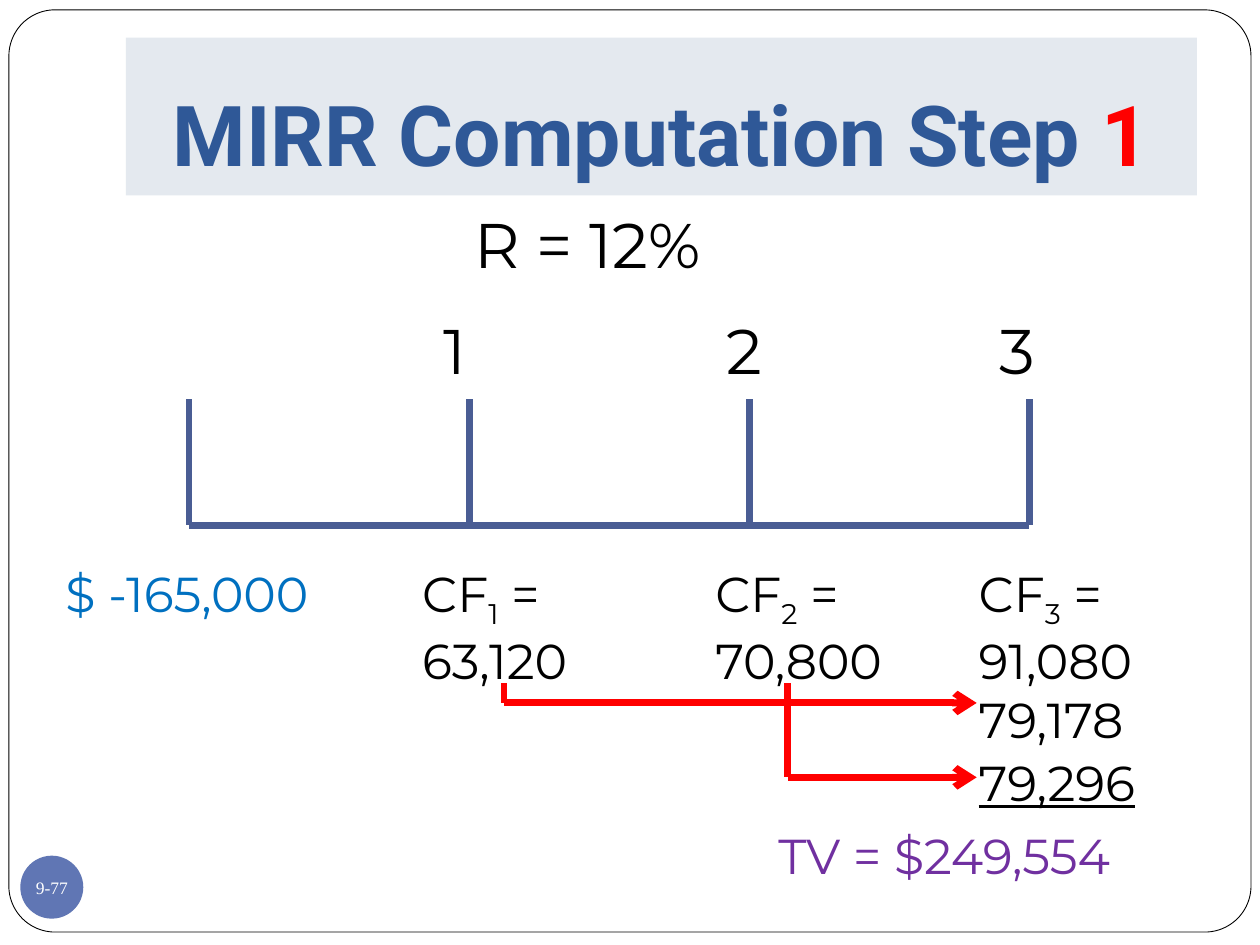
import pptx
import pptx.dml.color
import pptx.enum.shapes
import pptx.enum.text
import pptx.oxml
import pptx.oxml.ns
import pptx.util
from pptx.util import Cm

SHAPES = pptx.enum.shapes.MSO_SHAPE
ANCHORS = pptx.enum.text.MSO_ANCHOR
CENTER = pptx.enum.text.PP_ALIGN.CENTER
BLACK, WHITE, RED, STEEL = "000000", "FFFFFF", "FF0000", "4A5D94"


def paint(color_format, value):
    """Set a fill, line or font colour from a hex string."""
    color_format.rgb = pptx.dml.color.RGBColor.from_string(value)


def style(font, name, size, color, bold=False):
    """Set the typeface, size, colour and weight of a font."""
    font.name, font.size, font.bold = name, pptx.util.Pt(size), bold
    paint(font.color, color)


def add_panel(page, kind, box, fill):
    """Add a plain filled shape without outline or shadow."""
    panel = page.shapes.add_shape(kind, *map(Cm, box))
    panel.shadow.inherit = False
    panel.fill.solid()
    paint(panel.fill.fore_color, fill)
    panel.line.fill.background()
    return panel


def add_label(page, box, text, size=28, color=BLACK):
    """Add a wrapping text box and return its paragraph."""
    label = page.shapes.add_textbox(*map(Cm, box))
    label.text_frame.word_wrap = True
    para = label.text_frame.paragraphs[0]
    para.text = text
    style(para.font, "Montserrat", size, color)
    return para


def add_line(page, start, end, color, arrow=False):
    """Draw a thick straight line, with an arrowhead at its end if asked."""
    line = page.shapes.add_connector(
        pptx.enum.shapes.MSO_CONNECTOR.STRAIGHT, *map(Cm, start + end))
    line.line.width = pptx.util.Pt(4)
    paint(line.line.color, color)
    if arrow:
        head = pptx.oxml.parse_xml(
            f'<a:tailEnd {pptx.oxml.ns.nsdecls("a")} type="arrow"/>')
        line.line._get_or_add_ln().append(head)
    line._element.spPr.append(
        pptx.oxml.parse_xml(f'<a:effectLst {pptx.oxml.ns.nsdecls("a")}/>'))


def add_frame(page, box):
    """Draw the rounded page border and the page number badge."""
    left, top, width, height = box
    border = add_panel(page, SHAPES.ROUNDED_RECTANGLE, box, WHITE)
    border.adjustments[0] = 0.05
    border.line.width = pptx.util.Pt(0.5)
    paint(border.line.color, BLACK)
    badge = add_panel(page, SHAPES.OVAL,
                      (left + 0.23, top + height - 1.54, 1.27, 1.27), "6076B4")
    frame = badge.text_frame
    frame.margin_left = frame.margin_right = frame.margin_top = frame.margin_bottom = 0
    frame.word_wrap = False
    frame.vertical_anchor = ANCHORS.MIDDLE
    para = frame.paragraphs[0]
    para.text, para.alignment = "9-77", CENTER
    style(para.font, "Times New Roman", 10, WHITE)


def add_title(page, box):
    """Write the title band with its step number in red."""
    frame = add_panel(page, SHAPES.RECTANGLE, box, "E4E9EF").text_frame
    frame.word_wrap = True
    frame.vertical_anchor = ANCHORS.BOTTOM
    frame.margin_bottom = Cm(0.25)
    para = frame.paragraphs[0]
    para.alignment = CENTER
    for text, color in (("MIRR Computation Step ", "2F5897"), ("1", RED)):
        span = para.add_run()
        span.text = text
        style(span.font, "Roboto", 48, color, True)


def add_timeline(page, box):
    """Draw the time axis with equal ticks, the rate and the period numbers."""
    left, top, width, height = box
    bottom = top + height
    add_label(page, (left + 5.51, top - 4.04, 7.62, 1.8), "R = 12%", 36)
    add_line(page, (left, bottom), (left + width, bottom), STEEL)
    for period in range(4):
        tick = left + period * width / 3
        add_line(page, (tick, top), (tick, bottom), STEEL)
    for period, offset in enumerate((4.88, 10.59, 16.08), 1):
        add_label(page, (left + offset, top - 1.9, 2, 1.8), str(period), 36)


def add_cash_flows(page, box):
    """Write the outlay and the three cash flows under the axis."""
    left, top, width, height = box
    add_label(page, (left, top, 6.15, 1.45), "$ -165,000", color="0070C0")
    flows = ((7.19, 5.8, "63,120"), (13.1, 4.24, "70,800"), (18.41, 4.45, "91,080"))
    for period, (offset, span_width, amount) in enumerate(flows, 1):
        para = add_label(page, (left + offset, top, span_width, height), "CF")
        index = para.add_run()
        index.text = str(period)
        index._r.get_or_add_rPr().set("baseline", "-25000")
        para.add_run().text = f" = {amount}"


def add_terminal_value(page, box):
    """Carry the early cash flows forward and total the terminal value."""
    left, top, width, height = box
    right = left + width
    for offset, drop in ((0, 0.4), (5.72, 1.9)):
        start = left + offset
        add_line(page, (start, top), (start, top + drop), RED)
        add_line(page, (start, top + drop), (right, top + drop), RED, True)
    add_label(page, (right - 0.21, top, 4.45, 1.45), "79,178")
    last = add_label(page, (right - 0.21, top + 1.27, 4.45, 1.45), "79,296")
    last.font.underline = True
    add_label(page, (left + 5.28, top + height - 1.45, 8.26, 1.45),
              "TV = $249,554", color="7030A0")


def main():
    """Build and save the deck."""
    deck = pptx.Presentation()
    deck.slide_width, deck.slide_height = Cm(25.4), Cm(19.05)
    page = deck.slides.add_slide(deck.slide_layouts[6])
    add_frame(page, (0.18, 0.2, 25.04, 18.59))
    add_title(page, (2.54, 0.76, 21.59, 3.18))
    add_timeline(page, (3.81, 8.05, 16.94, 2.54))
    add_cash_flows(page, (1.07, 11.23, 22.86, 2.64))
    add_terminal_value(page, (10.16, 13.77, 9.53, 4.19))
    deck.save("out.pptx")


if __name__ == "__main__":
    main()
